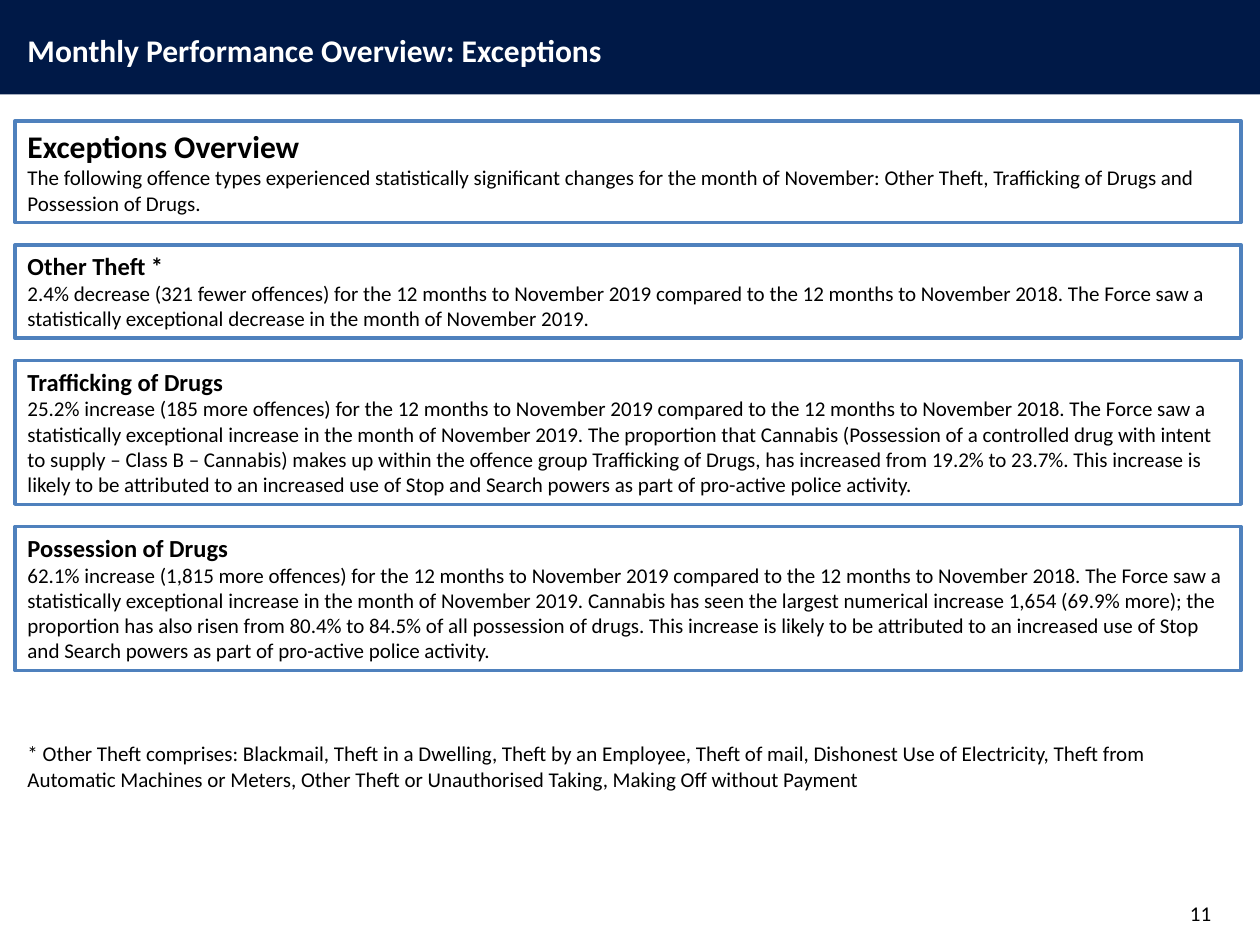
import pptx
import pptx.util
import pptx.dml.color
import pptx.enum.shapes
import pptx.enum.text
from dataclasses import dataclass

Pt = pptx.util.Pt
ALIGN = pptx.enum.text.PP_ALIGN
ANCHOR = pptx.enum.text.MSO_ANCHOR
AUTO_SIZE = pptx.enum.text.MSO_AUTO_SIZE
RECTANGLE = pptx.enum.shapes.MSO_SHAPE.RECTANGLE

TITLE = "Monthly Performance Overview: Exceptions"
PAGE_NUMBER = "11"
OVERVIEW = (
    "Exceptions Overview",
    "The following offence types experienced statistically significant changes for the month of "
    "November: Other Theft, Trafficking of Drugs and Possession of Drugs.",
)
OFFENCES = [
    (
        "Other Theft *",
        "2.4% decrease (321 fewer offences) for the 12 months to November 2019 compared to the "
        "12 months to November 2018. The Force saw a statistically exceptional decrease in the "
        "month of November 2019.",
    ),
    (
        "Trafficking of Drugs",
        "25.2% increase (185 more offences) for the 12 months to November 2019 compared to the "
        "12 months to November 2018. The Force saw a statistically exceptional increase in the "
        "month of November 2019. The proportion that Cannabis (Possession of a controlled drug "
        "with intent to supply – Class B – Cannabis) makes up within the offence group "
        "Trafficking of Drugs, has increased from 19.2% to 23.7%. This increase is likely to be "
        "attributed to an increased use of Stop and Search powers as part of pro-active police "
        "activity.",
    ),
    (
        "Possession of Drugs",
        "62.1% increase (1,815 more offences) for the 12 months to November 2019 compared to the "
        "12 months to November 2018. The Force saw a statistically exceptional increase in the "
        "month of November 2019. Cannabis has seen the largest numerical increase 1,654 (69.9% "
        "more); the proportion has also risen from 80.4% to 84.5% of all possession of drugs. "
        "This increase is likely to be attributed to an increased use of Stop and Search powers "
        "as part of pro-active police activity.",
    ),
]
FOOTNOTE = (
    "* Other Theft comprises: Blackmail, Theft in a Dwelling, Theft by an Employee, Theft of mail, "
    "Dishonest Use of Electricity, Theft from Automatic Machines or Meters, Other Theft or "
    "Unauthorised Taking, Making Off without Payment"
)


@dataclass(frozen=True)
class Theme:
    font: str = "Calibri"
    navy: str = "001947"
    blue: str = "4F81BD"
    white: str = "FFFFFF"
    black: str = "000000"
    title_size: int = 18
    heading_size: int = 14
    body_size: int = 12


THEME = Theme()
PAGE_WIDTH, PAGE_HEIGHT = 720, 540
BANNER_HEIGHT = 54
LEFT, CONTENT_WIDTH = 8.64, 700.56
PANELS_TOP, PANEL_GAP = 69.1, 12.7
PANEL_HEIGHTS = [58.1, 53.3, 82.3, 82.3]


def color(value):
    return pptx.dml.color.RGBColor.from_string(value)


def add_rectangle(page, left, top, width, height, fill, outline=None):
    box = page.shapes.add_shape(RECTANGLE, Pt(left), Pt(top), Pt(width), Pt(height))
    box.shadow.inherit = False
    box.fill.solid()
    box.fill.fore_color.rgb = color(fill)
    if outline:
        box.line.color.rgb = color(outline)
        box.line.width = Pt(2)
    else:
        box.line.fill.background()
    return box


def write(para, text, size=THEME.body_size, ink=THEME.black, bold=False, align=ALIGN.LEFT):
    para.alignment = align
    span = para.add_run()
    span.text = text
    span.font.name = THEME.font
    span.font.size = Pt(size)
    span.font.color.rgb = color(ink)
    span.font.bold = bold


def prepare_frame(box, anchor=ANCHOR.TOP, fit=AUTO_SIZE.SHAPE_TO_FIT_TEXT):
    """Make the text wrap and return the box's first paragraph."""
    frame = box.text_frame
    frame.word_wrap = True
    frame.auto_size = fit
    frame.vertical_anchor = anchor
    return frame.paragraphs[0]


def add_label(page, left, top, width, height, text, frame_format=None, **text_format):
    box = page.shapes.add_textbox(Pt(left), Pt(top), Pt(width), Pt(height))
    write(prepare_frame(box, **(frame_format or {})), text, **text_format)


def add_panel(page, top, height, heading, body, heading_size):
    box = add_rectangle(page, LEFT, top, CONTENT_WIDTH, height, THEME.white, THEME.blue)
    write(prepare_frame(box), heading, size=heading_size, bold=True)
    write(box.text_frame.add_paragraph(), body)


def main():
    deck = pptx.Presentation()
    deck.slide_width, deck.slide_height = Pt(PAGE_WIDTH), Pt(PAGE_HEIGHT)
    page = deck.slides.add_slide(deck.slide_layouts[6])

    add_rectangle(page, 0, 0, PAGE_WIDTH, BANNER_HEIGHT, THEME.navy)
    add_label(page, LEFT, 14.4, 566.6, 29, TITLE,
              size=THEME.title_size, ink=THEME.white, bold=True)
    add_label(page, 531.4, 507.6, 167.8, 28.8, PAGE_NUMBER, align=ALIGN.RIGHT,
              frame_format={"anchor": ANCHOR.MIDDLE, "fit": AUTO_SIZE.NONE})

    top = PANELS_TOP
    for index, (heading, body) in enumerate([OVERVIEW, *OFFENCES]):
        heading_size = THEME.heading_size if index else THEME.title_size
        add_panel(page, top, PANEL_HEIGHTS[index], heading, body, heading_size)
        top += PANEL_HEIGHTS[index] + PANEL_GAP

    add_label(page, LEFT, 419.8, CONTENT_WIDTH, 36, FOOTNOTE)
    deck.save("out.pptx")


if __name__ == "__main__":
    main()
